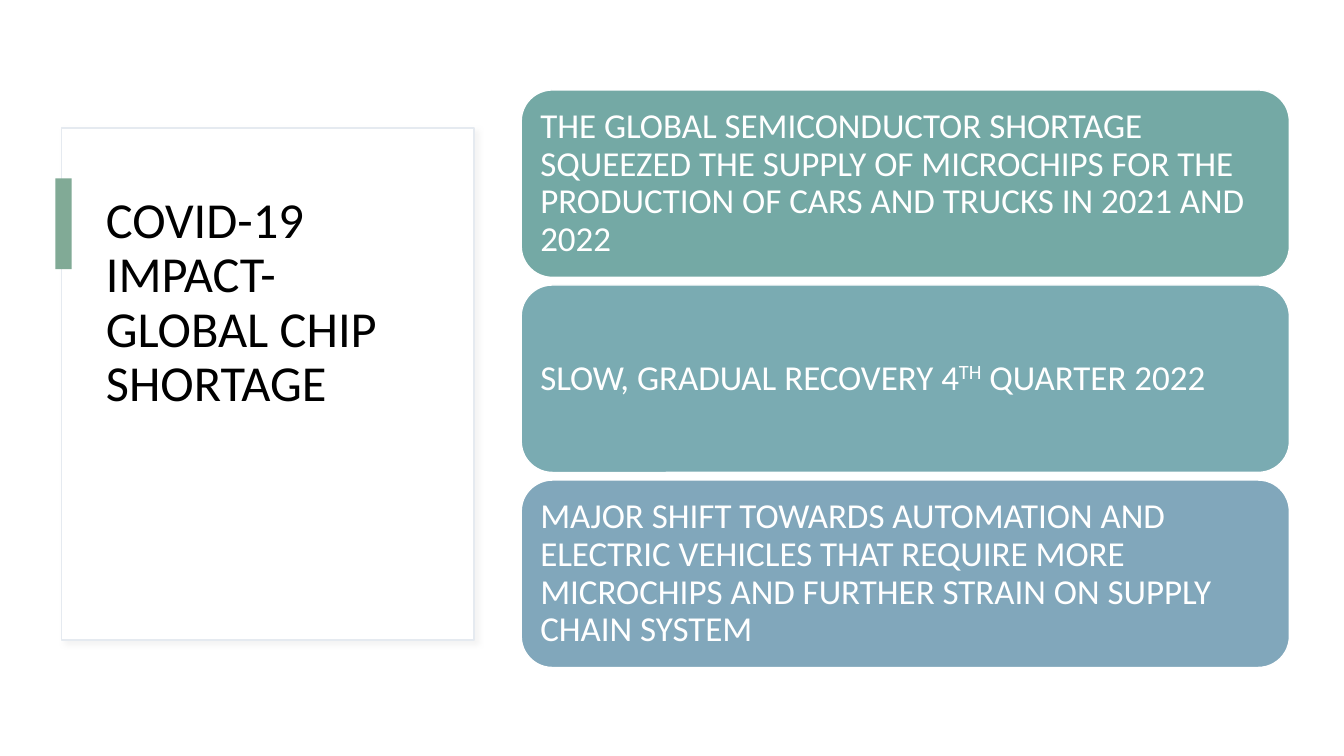
from dataclasses import dataclass

from lxml.etree import SubElement
from pptx import Presentation
from pptx.dml.color import RGBColor
from pptx.enum.shapes import MSO_SHAPE
from pptx.enum.text import MSO_ANCHOR, MSO_AUTO_SIZE, PP_ALIGN
from pptx.oxml.ns import qn
from pptx.util import Inches, Pt


@dataclass(frozen=True)
class Theme:
    font: str = "Calibri"
    title_size: int = 36
    card_size: int = 25
    line_spacing: float = 0.9
    ink: str = "000000"
    paper: str = "FFFFFF"
    panel_line: str = "E5EAF0"
    shadow: str = "D9D9D9"
    accent: str = "81AA96"
    cards: tuple = ("74A9A5", "7AABB2", "81A7BB")


class SlideBuilder:
    """Places elements on a grid of 100 columns by 100 rows."""

    def __init__(self, presentation, theme):
        self.theme = theme
        self.column = presentation.slide_width / 100
        self.row = presentation.slide_height / 100
        self.slide = presentation.slides.add_slide(presentation.slide_layouts[5])

    def place(self, left, top, width, height):
        return (round(left * self.column), round(top * self.row),
                round(width * self.column), round(height * self.row))

    def box(self, kind, area, fill, line=None):
        shape = self.slide.shapes.add_shape(kind, *self.place(*area))
        shape.shadow.inherit = False
        shape.fill.solid()
        shape.fill.fore_color.rgb = RGBColor.from_string(fill)
        if line:
            shape.line.color.rgb = RGBColor.from_string(line)
            shape.line.width = Pt(1)
        else:
            shape.line.fill.background()
        return shape

    def panel(self, area):
        shape = self.box(MSO_SHAPE.RECTANGLE, area, self.theme.paper, self.theme.panel_line)
        effects = shape.element.spPr.find(qn("a:effectLst"))
        shadow = SubElement(effects, qn("a:outerShdw"), blurRad=str(Pt(4)),
                            dist=str(Pt(3)), dir=str(45 * 60000))
        color = SubElement(shadow, qn("a:srgbClr"), val=self.theme.shadow)
        SubElement(color, qn("a:alpha"), val="30000")

    def style(self, paragraph, size, color):
        paragraph.alignment = PP_ALIGN.LEFT
        paragraph.line_spacing = self.theme.line_spacing
        paragraph.font.name = self.theme.font
        paragraph.font.size = Pt(size)
        paragraph.font.color.rgb = RGBColor.from_string(color)

    def title(self, area, text):
        """Fill the title placeholder and bring it in front of the panel."""
        title = self.slide.shapes.title
        title.left, title.top, title.width, title.height = self.place(*area)
        frame = title.text_frame
        frame.text = text
        frame.word_wrap = True
        frame.auto_size = MSO_AUTO_SIZE.NONE
        frame.vertical_anchor = MSO_ANCHOR.TOP
        self.style(frame.paragraphs[0], self.theme.title_size, self.theme.ink)
        title.element.getparent().append(title.element)

    def card(self, area, fill, parts):
        """Draw a rounded card; every second text part is superscript."""
        shape = self.box(MSO_SHAPE.ROUNDED_RECTANGLE, area, fill, self.theme.paper)
        frame = shape.text_frame
        frame.word_wrap = True
        frame.vertical_anchor = MSO_ANCHOR.MIDDLE
        frame.margin_left = frame.margin_right = Inches(0.1)
        frame.margin_top = frame.margin_bottom = Inches(0.1)
        paragraph = frame.paragraphs[0]
        self.style(paragraph, self.theme.card_size, self.theme.paper)
        for index, part in enumerate(parts):
            run = paragraph.add_run()
            run.text = part
            if index % 2:
                run.font._element.set("baseline", "30000")


CARDS = (
    ("THE GLOBAL SEMICONDUCTOR SHORTAGE SQUEEZED THE SUPPLY OF MICROCHIPS "
     "FOR THE PRODUCTION OF CARS AND TRUCKS IN 2021 AND 2022",),
    ("SLOW, GRADUAL RECOVERY 4", "TH", " QUARTER 2022"),
    ("MAJOR SHIFT TOWARDS AUTOMATION AND ELECTRIC VEHICLES THAT REQUIRE MORE "
     "MICROCHIPS AND FURTHER STRAIN ON SUPPLY CHAIN SYSTEM",),
)
CARD_TOP, CARD_HEIGHT, CARD_PITCH = 11.9, 24.8, 25.8


def main():
    presentation = Presentation()
    presentation.slide_width = Inches(13.33)
    presentation.slide_height = Inches(7.5)
    theme = Theme()
    builder = SlideBuilder(presentation, theme)

    builder.panel((4.58, 16.93, 30.68, 67.73))
    builder.title((7.13, 25.07, 25.43, 51.33), "COVID-19 IMPACT- GLOBAL CHIP SHORTAGE")
    builder.box(MSO_SHAPE.RECTANGLE, (4.13, 23.6, 1.2, 12), theme.accent)
    for index, (fill, parts) in enumerate(zip(theme.cards, CARDS)):
        top = CARD_TOP + index * CARD_PITCH
        builder.card((38.78, top, 57.16, CARD_HEIGHT), fill, parts)

    presentation.save("out.pptx")


if __name__ == "__main__":
    main()
